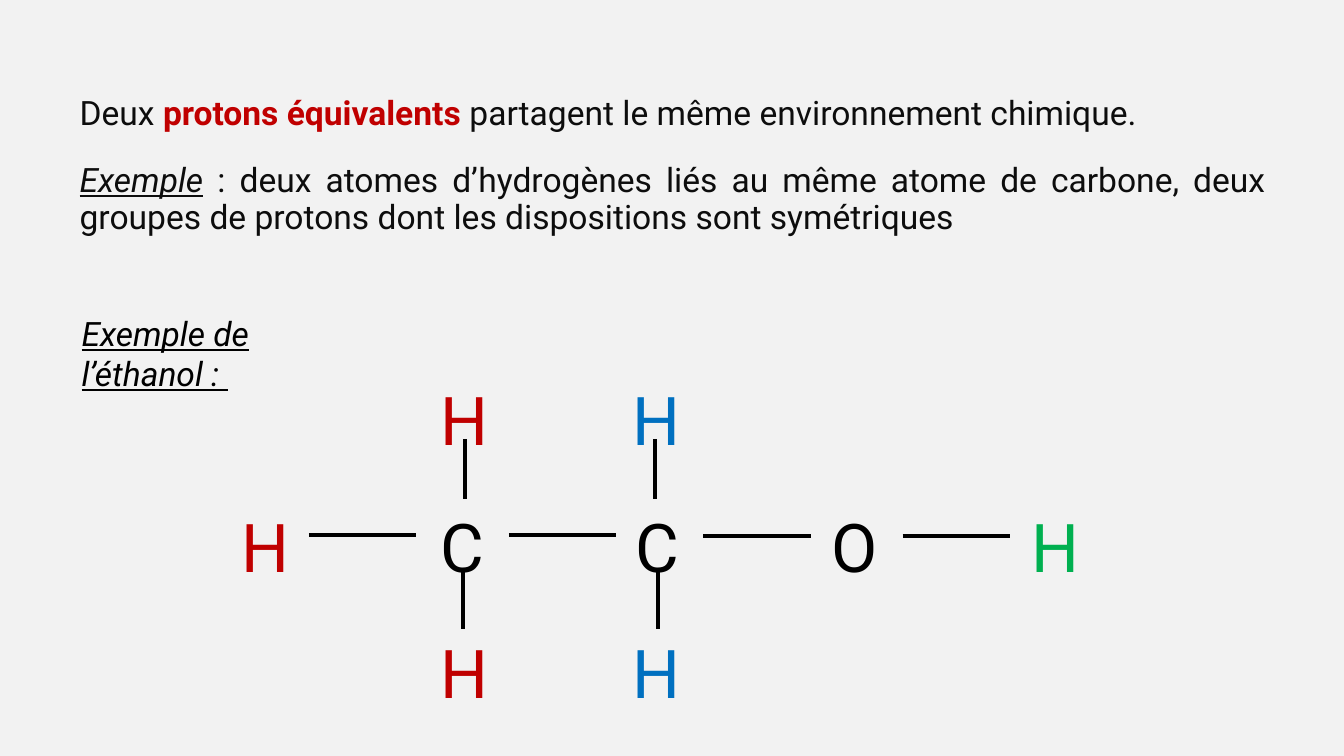
import pptx
import pptx.dml.color
import pptx.enum.shapes
import pptx.enum.text
import pptx.oxml.ns
import pptx.util
from lxml import etree

In = pptx.util.Inches
Pt = pptx.util.Pt
ALIGN = pptx.enum.text.PP_ALIGN
ANCHOR = pptx.enum.text.MSO_ANCHOR
FIT = pptx.enum.text.MSO_AUTO_SIZE.SHAPE_TO_FIT_TEXT
RED, BLUE, GREEN = "C00000", "0070C0", "00B050"
BLACK, DARK = "000000", "0D0D0D"


def rgb(value):
    return pptx.dml.color.RGBColor.from_string(value)


def style(r, size, color, bold=False, emphasis=False):
    """Format a run; emphasis means italic and underlined."""
    r.font.name = "Roboto"
    r.font.size = Pt(size)
    r.font.color.rgb = rgb(color)
    r.font.bold = bold
    r.font.italic = r.font.underline = emphasis


prs = pptx.Presentation()
prs.slide_width, prs.slide_height = In(26.67), In(15)
s = prs.slides.add_slide(prs.slide_layouts[1])
s.background.fill.solid()
s.background.fill.fore_color.rgb = rgb("F2F2F2")
title = s.shapes.title
title._element.getparent().remove(title._element)

# Definition: (text, colour, bold, emphasis) for each run
definition = [
    [("Deux ", DARK, False, False),
     ("protons équivalents ", RED, True, False),
     ("partagent le même environnement chimique. ", DARK, False, False)],
    [("Exemple", DARK, False, True),
     (" : deux atomes d’hydrogènes liés au même atome de carbone, deux groupes "
      "de protons dont les dispositions sont symétriques", DARK, False, False)],
]
body = s.placeholders[1]
body.left, body.top, body.width, body.height = In(1.52), In(1.84), In(23.67), In(2.92)
tf = body.text_frame
tf.word_wrap = True
tf.auto_size = FIT
tf.vertical_anchor = ANCHOR.MIDDLE
tf.margin_left = tf.margin_right = tf.margin_top = tf.margin_bottom = In(0.06)
for i, runs in enumerate(definition):
    p = tf.paragraphs[0] if i == 0 else tf.add_paragraph()
    p.alignment = ALIGN.JUSTIFY
    p.line_spacing = 0.9
    p.space_before = Pt(45)
    pPr = p._p.get_or_add_pPr()
    pPr.set("marL", "0")
    pPr.set("indent", "0")
    etree.SubElement(pPr, pptx.oxml.ns.qn("a:buNone"))
    for text, color, bold, emphasis in runs:
        r = p.add_run()
        r.text = text
        style(r, 48, color, bold, emphasis)

# Atoms of ethanol: (symbol, left, row, width, colour)
TOP, ROW = 7.46, 2.51
atoms = [
    ("C", 8.64, 1, 1.09, BLACK), ("C", 12.52, 1, 1.09, BLACK),
    ("O", 16.4, 1, 1.19, BLACK), ("H", 20.38, 1, 1.16, GREEN),
    ("H", 4.69, 1, 1.16, RED),
    ("H", 8.64, 0, 1.16, RED), ("H", 8.64, 2, 1.16, RED),
    ("H", 12.45, 0, 1.16, BLUE), ("H", 12.45, 2, 1.16, BLUE),
]
for symbol, left, row, width, color in atoms:
    tf = s.shapes.add_textbox(In(left), In(TOP + ROW * row), In(width), In(1.72)).text_frame
    tf.word_wrap = False
    tf.auto_size = FIT
    tf.text = symbol
    style(tf.paragraphs[0].runs[0], 96, color)

# Bonds: (x, y, horizontal length, vertical length)
across = [(x, y, 2.13, 0) for x, y in
          [(13.96, 10.64), (17.91, 10.64), (10.1, 10.61), (6.13, 10.61)]]
down = [(x, y, 0, 1.18) for x, y in
        [(13, 8.72), (9.18, 11.3), (9.22, 8.72), (13.06, 11.3)]]
for x, y, dx, dy in across + down:
    bond = s.shapes.add_connector(pptx.enum.shapes.MSO_CONNECTOR.STRAIGHT,
                                  In(x), In(y), In(x + dx), In(y + dy))
    bond.line.color.rgb = rgb(BLACK)
    bond.line.width = Pt(6)
    etree.SubElement(bond._element.spPr, pptx.oxml.ns.qn("a:effectLst"))

tf = s.shapes.add_textbox(In(1.52), In(6.16), In(5.84), In(0.91)).text_frame
tf.word_wrap = True
tf.text = "Exemple de l’éthanol : "
style(tf.paragraphs[0].runs[0], 48, BLACK, emphasis=True)

prs.save("out.pptx")
